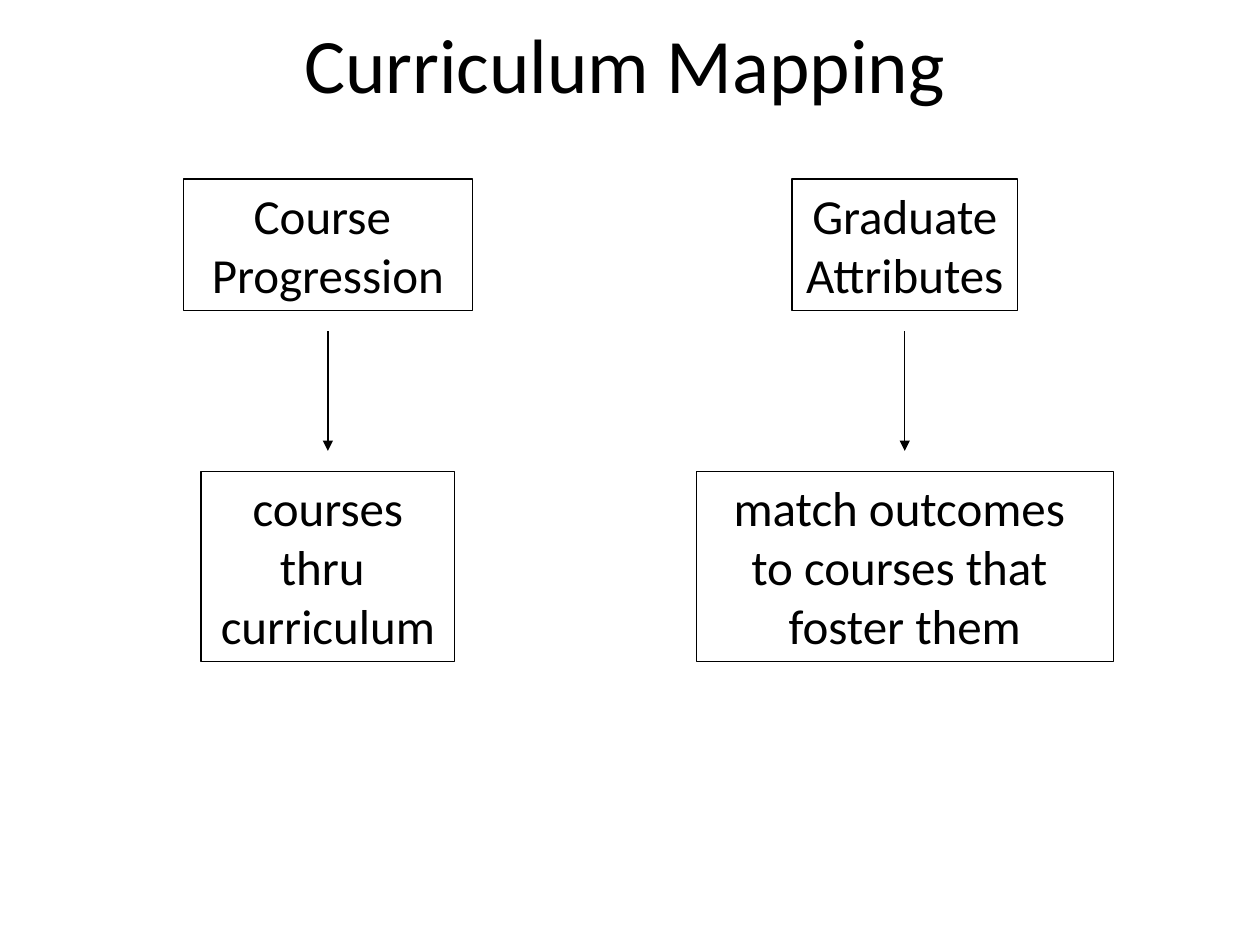
from pptx import Presentation
from pptx.dml.color import RGBColor
from pptx.enum.shapes import MSO_CONNECTOR, MSO_SHAPE
from pptx.enum.text import MSO_ANCHOR, MSO_AUTO_SIZE, PP_ALIGN
from pptx.oxml.ns import qn
from pptx.util import Cm, Pt
from lxml.etree import SubElement

INK = "000000"


def color(code):
    return RGBColor.from_string(code)


def write(frame, text, size):
    """Fill a text frame with centred paragraphs in one style."""
    frame.text = text
    frame.auto_size = MSO_AUTO_SIZE.NONE
    frame.vertical_anchor = MSO_ANCHOR.TOP
    for para in frame.paragraphs:
        para.alignment = PP_ALIGN.CENTER
        for run in para.runs:
            run.font.name = "Calibri"
            run.font.size = Pt(size)
            run.font.color.rgb = color(INK)


deck = Presentation()
deck.slide_width, deck.slide_height = Cm(25.4), Cm(19.05)
slide = deck.slides.add_slide(deck.slide_layouts[5])

title = slide.shapes.title
title.left, title.top, title.width, title.height = Cm(0), Cm(0.2), Cm(25.2), Cm(2.14)
write(title.text_frame, "Curriculum Mapping", 44)

# Each column: centre, then (text, width, wrap) for the upper and lower box
columns = [
    (6.61, [("Course \nProgression", 5.82, False),
            ("courses\nthru \ncurriculum", 5.11, False)]),
    (18.24, [("Graduate\vAttributes", 4.55, False),
             ("match outcomes \nto courses that \nfoster them", 8.41, True)]),
]
rows = [(3.61, 2.65), (9.5, 3.84)]  # top, height

for mid, boxes in columns:
    for (text, width, wrap), (top, height) in zip(boxes, rows):
        box = slide.shapes.add_shape(
            MSO_SHAPE.RECTANGLE, Cm(mid - width / 2), Cm(top), Cm(width), Cm(height))
        box.shadow.inherit = False
        box.fill.background()
        box.line.color.rgb = color(INK)
        box.line.width = Pt(0.75)
        write(box.text_frame, text, 28)
        box.text_frame.word_wrap = wrap

    arrow = slide.shapes.add_connector(
        MSO_CONNECTOR.STRAIGHT, Cm(mid), Cm(6.68), Cm(mid), Cm(9.09))
    arrow.line.color.rgb = color(INK)
    arrow.line.width = Pt(0.75)
    SubElement(arrow.line._get_or_add_ln(), qn("a:tailEnd"), type="triangle")
    SubElement(arrow._element.spPr, qn("a:effectLst"))

deck.save("out.pptx")
